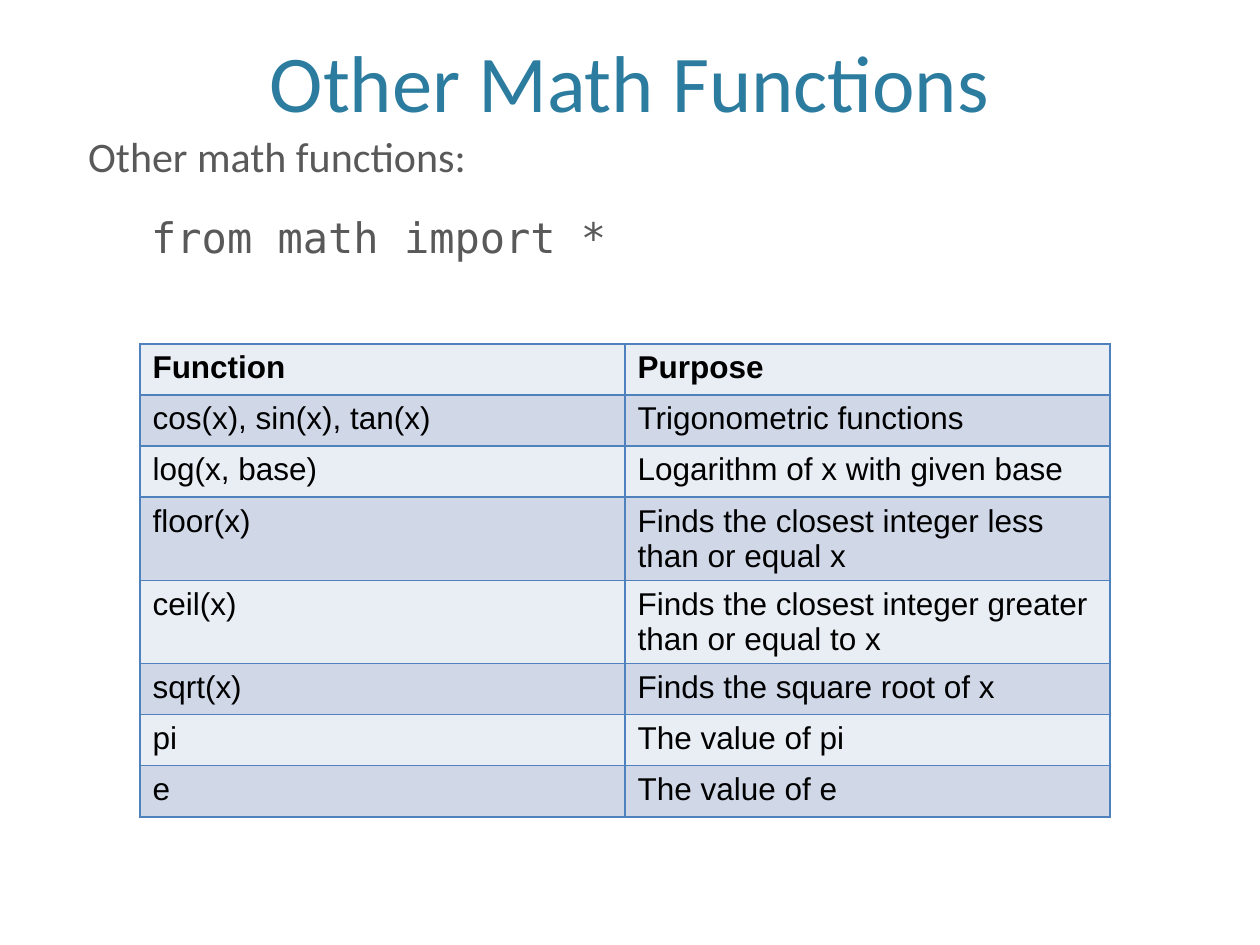
import pptx
import pptx.util
import pptx.dml.color
import pptx.enum.text
import pptx.oxml
import lxml.etree

Pt = pptx.util.Pt
NS = "http://schemas.openxmlformats.org/drawingml/2006/main"


def color(code):
    return pptx.dml.color.RGBColor.from_string(code)


def write(para, text, code, style):
    run = para.add_run()
    run.text = text
    for key, value in style.items():
        setattr(run.font, key, value)
    run.font.color.rgb = color(code)


deck = pptx.Presentation()
deck.slide_width, deck.slide_height = Pt(720), Pt(540)
slide = deck.slides.add_slide(deck.slide_layouts[1])
title, body = slide.placeholders

places = [
    (title, (43.2, 8.6, 632.9, 68.4), pptx.enum.text.MSO_ANCHOR.BOTTOM),
    (body, (43.2, 76.3, 632.9, 391), pptx.enum.text.MSO_ANCHOR.TOP),
]
for shape, box, anchor in places:
    for key, value in zip(("left", "top", "width", "height"), box):
        setattr(shape, key, Pt(value))
    frame = shape.text_frame
    frame.word_wrap = True
    frame.auto_size = pptx.enum.text.MSO_AUTO_SIZE.NONE
    frame.vertical_anchor = anchor

head = title.text_frame.paragraphs[0]
head.alignment = pptx.enum.text.PP_ALIGN.CENTER
write(head, "Other Math Functions", "2C7C9F", {"name": "Calibri", "size": Pt(46)})

lines = [
    ("Other math functions:", "Calibri", 0, 0, 0),
    ("from math import *", "DejaVu Sans Mono", 1, 36, 23.5),
]
for index, (text, font, level, indent, gap) in enumerate(lines):
    frame = body.text_frame
    para = frame.add_paragraph() if index else frame.paragraphs[0]
    props = para._p.get_or_add_pPr()
    props.set("marL", str(Pt(indent)))
    props.set("indent", "0")
    lxml.etree.SubElement(props, f"{{{NS}}}buNone")
    layout = {"level": level, "line_spacing": 0.8, "space_before": Pt(gap)}
    for key, value in layout.items():
        setattr(para, key, value)
    write(para, text, "595959", {"name": font, "size": Pt(24)})

rows = [
    ("Function", "Purpose"),
    ("cos(x), sin(x), tan(x)", "Trigonometric functions"),
    ("log(x, base)", "Logarithm of x with given base"),
    ("floor(x)", "Finds the closest integer less than or equal x"),
    ("ceil(x)", "Finds the closest integer greater than or equal to x"),
    ("sqrt(x)", "Finds the square root of x"),
    ("pi", "The value of pi"),
    ("e", "The value of e"),
]
high = 29.2
grid = slide.shapes.add_table(
    len(rows), 2, Pt(80), Pt(196.5), Pt(554.4), Pt(high * len(rows))
).table
for r, row in enumerate(rows):
    grid.rows[r].height = Pt(high)
    for c, text in enumerate(row):
        cell = grid.cell(r, c)
        style = {"name": "Arial", "size": Pt(18), "bold": r == 0}
        write(cell.text_frame.paragraphs[0], text, "000000", style)
        props = cell._tc.get_or_add_tcPr()
        for side in ("lnL", "lnR", "lnT", "lnB"):
            props.append(pptx.oxml.parse_xml(
                f'<a:{side} xmlns:a="{NS}" w="{Pt(1)}"><a:solidFill>'
                f'<a:srgbClr val="4F81BD"/></a:solidFill></a:{side}>'
            ))
        cell.fill.solid()
        cell.fill.fore_color.rgb = color("D0D8E8" if r % 2 else "E9EDF4")

deck.save("out.pptx")
